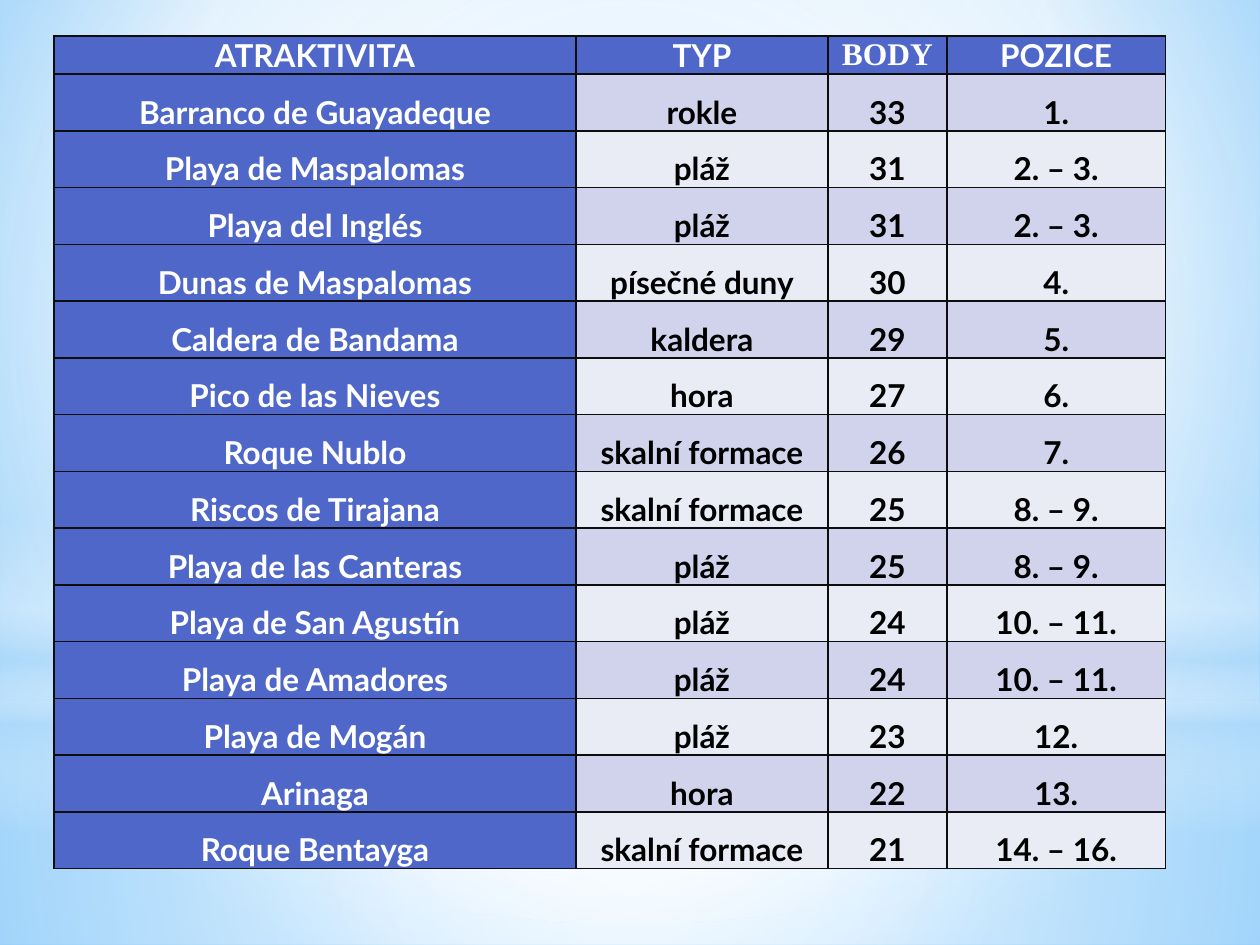
"""Build a slide that ranks attractions in a table over a soft blue backdrop."""
import pptx
import pptx.dml.color
import pptx.enum.shapes
import pptx.enum.text
import pptx.oxml
import pptx.oxml.ns
import pptx.util

Cm = pptx.util.Cm
COLOURS = {
    "white": "FFFFFF", "black": "000000", "border": "0D0D0D",
    "header": "4E67C8", "band_dark": "D0D3EB", "band_light": "E9EBF5",
    "sky": "9ED5FF", "deep_sky": "5BB9FF", "haze": "B4DCFA",
}
CENTRE = (50, 50, 50, 50)
BACKGROUND = [(0, "sky", 100), (60, "white", 100), (100, "deep_sky", 100)]
HAZE_LAYERS = [
    ("RECTANGLE", 14.17, 4.88, CENTRE,
     [(0, "white", 91), (37, "white", 76), (100, "haze", 79)]),
    ("RECTANGLE", 0, 14.17, CENTRE,
     [(0, "white", 89), (48, "white", 62), (100, "haze", 79)]),
    ("RECTANGLE", 10.46, 6.35, None,
     [(0, "white", 0), (29, "white", 30), (45, "haze", 40),
      (55, "white", 26), (65, "haze", 60), (100, "white", 0)]),
    ("OVAL", 4.45, 14.17, CENTRE, [(0, "white", 100), (56, "white", 0)]),
]
COLUMN_WIDTHS = [10.52, 5.08, 2.4, 4.4]
HEADER_HEIGHT, ROW_HEIGHT = 0.76, 1.14
ROWS = [
    ("ATRAKTIVITA", "TYP", "BODY", "POZICE"),
    ("Barranco de Guayadeque", "rokle", "33", "1."),
    ("Playa de Maspalomas", "pláž", "31", "2. – 3."),
    ("Playa del Inglés", "pláž", "31", "2. – 3."),
    ("Dunas de Maspalomas", "písečné duny", "30", "4."),
    ("Caldera de Bandama", "kaldera", "29", "5."),
    ("Pico de las Nieves", "hora", "27", "6."),
    ("Roque Nublo", "skalní formace", "26", "7."),
    ("Riscos de Tirajana", "skalní formace", "25", "8. – 9."),
    ("Playa de las Canteras", "pláž", "25", "8. – 9."),
    ("Playa de San Agustín", "pláž", "24", "10. – 11."),
    ("Playa de Amadores", "pláž", "24", "10. – 11."),
    ("Playa de Mogán", "pláž", "23", "12."),
    ("Arinaga", "hora", "22", "13."),
    ("Roque Bentayga", "skalní formace", "21", "14. – 16."),
]
CELL_FORMAT = {
    "margin_left": Cm(0.08), "margin_right": Cm(0.08),
    "margin_top": 0, "margin_bottom": 0,
    "vertical_anchor": pptx.enum.text.MSO_ANCHOR.MIDDLE,
}
FONT_FORMAT = {"size": pptx.util.Pt(18), "bold": True}


def set_attributes(target, values):
    """Set every named value on the target."""
    for name, value in values.items():
        setattr(target, name, value)


def rgb(name):
    """Return the named colour."""
    return pptx.dml.color.RGBColor.from_string(COLOURS[name])


def make_element(xml):
    """Make a drawing element whose root tag ends in a NS marker."""
    return pptx.oxml.parse_xml(xml.replace("NS", pptx.oxml.ns.nsdecls("a"), 1))


def set_gradient(fill, properties, stops, focus):
    """Fill with a circular gradient, or a vertical one without focus."""
    fill.background()
    stop_xml = "".join(
        f'<a:gs pos="{position * 1000}"><a:srgbClr val="{COLOURS[colour]}">'
        f'<a:alpha val="{opacity * 1000}"/></a:srgbClr></a:gs>'
        for position, colour, opacity in stops)
    direction = '<a:lin ang="5400000" scaled="0"/>'
    if focus:
        sides = " ".join(f'{side}="{share * 1000}"' for side, share in zip("ltrb", focus))
        direction = f'<a:path path="circle"><a:fillToRect {sides}/></a:path>'
    gradient = make_element(
        f'<a:gradFill NS rotWithShape="1"><a:gsLst>{stop_xml}</a:gsLst>{direction}</a:gradFill>')
    properties.replace(properties.find(pptx.oxml.ns.qn("a:noFill")), gradient)


def add_haze(slide, width, kind, top, height, focus, stops):
    """Add one translucent layer across the slide."""
    shape = slide.shapes.add_shape(
        getattr(pptx.enum.shapes.MSO_SHAPE, kind), 0, Cm(top), width, Cm(height))
    shape.shadow.inherit = False
    shape.line.fill.background()
    set_gradient(shape.fill, shape._element.spPr, stops, focus)


def set_borders(cell):
    """Draw a thin line on all four sides of a cell."""
    properties = cell._tc.get_or_add_tcPr()
    for side in "LRTB":
        properties.append(make_element(
            f'<a:ln{side} NS w="12700"><a:solidFill><a:srgbClr val="{COLOURS["border"]}"/>'
            f'</a:solidFill></a:ln{side}>'))


def fill_cell(cell, text, row, column):
    """Write and format one cell of the ranking."""
    is_heading = row == 0 or column == 0
    band = "band_dark" if row % 2 else "band_light"
    set_borders(cell)
    cell.fill.solid()
    cell.fill.fore_color.rgb = rgb("header" if is_heading else band)
    set_attributes(cell, CELL_FORMAT)
    paragraph = cell.text_frame.paragraphs[0]
    paragraph.alignment = pptx.enum.text.PP_ALIGN.CENTER
    if row:
        paragraph.line_spacing = 1.5
    run = paragraph.add_run()
    run.text = text
    set_attributes(run.font, FONT_FORMAT)
    run.font.name = "Times New Roman" if text == "BODY" else "Lato"
    run.font.color.rgb = rgb("white" if is_heading else "black")


def add_ranking(slide):
    """Add the table of attractions."""
    heights = [HEADER_HEIGHT] + [ROW_HEIGHT] * (len(ROWS) - 1)
    table = slide.shapes.add_table(
        len(ROWS), len(COLUMN_WIDTHS), Cm(1.09), Cm(0.73),
        Cm(sum(COLUMN_WIDTHS)), Cm(sum(heights))).table
    table.horz_banding = False
    for column, width in zip(table.columns, COLUMN_WIDTHS):
        column.width = Cm(width)
    for row, height in zip(table.rows, heights):
        row.height = Cm(height)
    for row, texts in enumerate(ROWS):
        for column, text in enumerate(texts):
            fill_cell(table.cell(row, column), text, row, column)


def main():
    """Build and save the presentation."""
    presentation = pptx.Presentation()
    set_attributes(presentation, {"slide_width": Cm(25.4), "slide_height": Cm(19.05)})
    slide = presentation.slides.add_slide(presentation.slide_layouts[6])
    fill = slide.background.fill
    properties = slide._element.find(".//" + pptx.oxml.ns.qn("p:bgPr"))
    set_gradient(fill, properties, BACKGROUND, (20, 10, 20, 60))
    for layer in HAZE_LAYERS:
        add_haze(slide, presentation.slide_width, *layer)
    add_ranking(slide)
    presentation.save("out.pptx")


if __name__ == "__main__":
    main()
